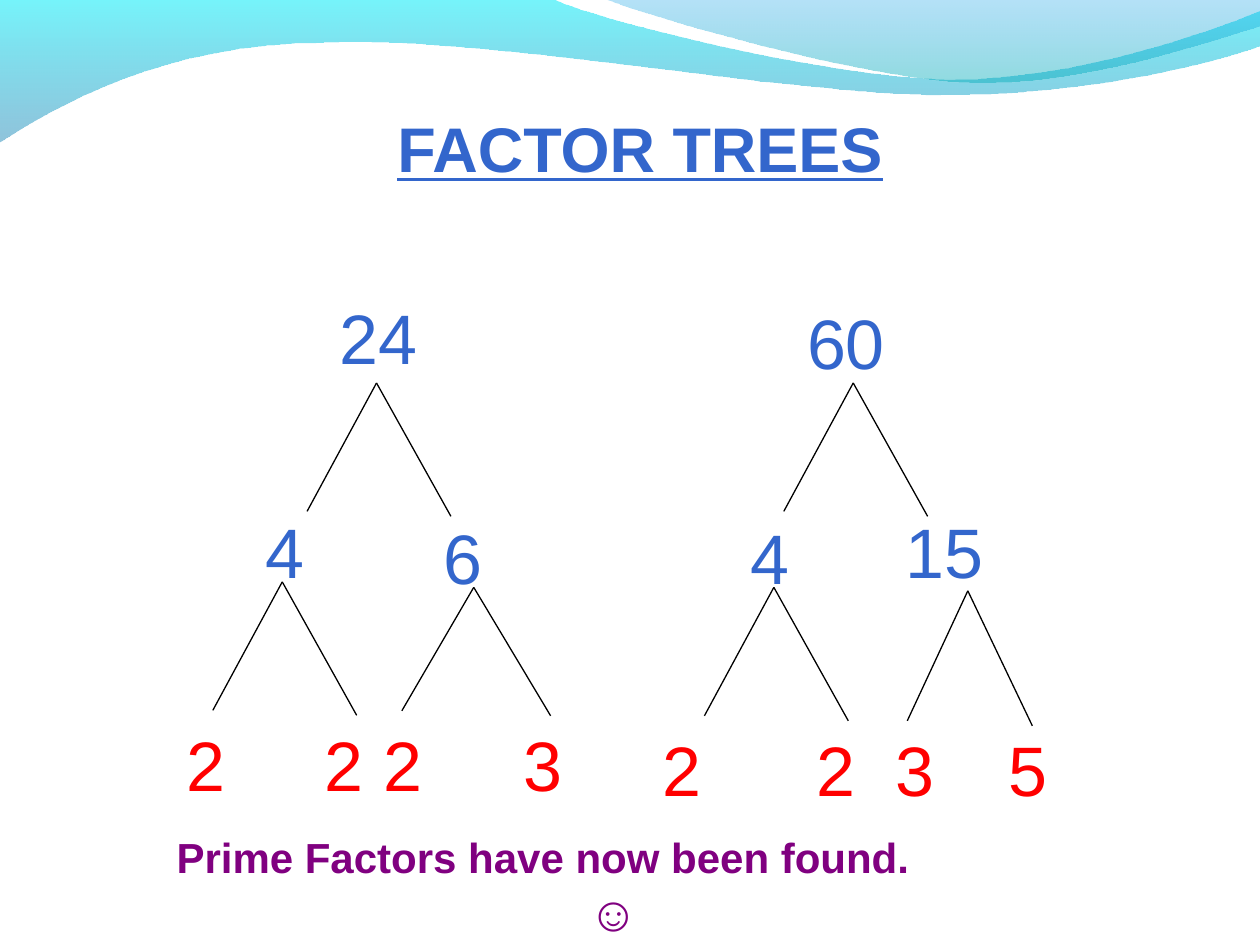
from dataclasses import dataclass

from lxml import etree
from pptx import Presentation
from pptx.dml.color import RGBColor
from pptx.enum.shapes import MSO_CONNECTOR
from pptx.enum.text import PP_ALIGN
from pptx.oxml.ns import qn
from pptx.slide import Slide
from pptx.text.text import TextFrame
from pptx.text.text import _Paragraph as Paragraph
from pptx.util import Cm, Pt

STRAIGHT = MSO_CONNECTOR.STRAIGHT
LEFT, CENTER = PP_ALIGN.LEFT, PP_ALIGN.CENTER
Point = tuple[float, float]


@dataclass(frozen=True)
class Theme:
    font: str = "Arial"
    blue: str = "3366CC"
    red: str = "FF0000"
    purple: str = "800080"
    black: str = "000000"
    title: int = 36
    number: int = 40
    note: int = 24
    smile: int = 28
    line: float = 0.75


THEME = Theme()


# All lengths below are in centimetres
@dataclass(frozen=True)
class GradientStop:
    color: str
    opacity: int


@dataclass(frozen=True)
class Wave:
    start: Point
    segments: list[tuple[Point, ...]]  # one point: line, three points: curve
    bottom: GradientStop
    top: GradientStop


@dataclass(frozen=True)
class Number:
    text: str
    left: float
    top: float
    width: float = 1.6
    indent: float = 0
    color: str = THEME.blue


@dataclass(frozen=True)
class Fork:
    x: float
    y: float
    left: float = 1.4
    right: float = 1.5
    drop: float = 2.59


WAVES = [
    Wave((-0.03, 0), [
        ((11.18, 0),),
        ((12.09, 0.43), (16.87, 1.6), (19.25, 1.6)),
        ((21.67, 1.6), (24.33, 0.66), (25.4, 0.23)),
        ((25.43, 0.91),),
        ((24.97, 1.12), (22.1, 1.93), (18.95, 1.91)),
        ((15.8, 1.91), (9.7, 0.71), (6.53, 0.86)),
        ((3.28, 0.89), (1.17, 2.11), (-0.03, 2.87)),
    ], GradientStop("0079AF", 44), GradientStop("00EBF8", 54)),
    Wave((12.17, -0.03), [
        ((12.93, 0.28), (17.32, 1.57), (19.53, 1.65)),
        ((21.74, 1.75), (24.41, 0.81), (25.4, 0.53)),
        ((25.4, 0),),
    ], GradientStop("00ADB6", 44), GradientStop("009BE5", 29)),
]

BRANCH_NUMBERS = [
    Number("24", 2.29, 5.82, 8.41, 4.3),
    Number("60", 13.89, 5.92, 8.41, 2.13),
    Number("4", 5.11, 10.13, 2.79),
    Number("6", 7.9, 10.24, 2.21, 0.79),
    Number("4", 14.1, 10.24, 2.39, 0.78),
    Number("15", 18.01, 10.13, 3.51),
]

# Top of each row of primes, with the digits and their left edges
PRIME_ROWS = [
    (14.43, [("2", 3.51), ("2", 6.3), ("2", 7.49), ("3", 10.31)]),
    (14.53, [("2", 13.11), ("2", 16.21), ("3", 17.81), ("5", 20.09)]),
]

FORKS = [
    Fork(7.59, 7.72),
    Fork(17.2, 7.72),
    Fork(5.69, 11.73),
    Fork(9.55, 11.84, 1.45, 1.55, 2.49),
    Fork(15.6, 11.84),
    Fork(19.51, 11.91, 1.22, 1.3, 2.62),
]


def draw_wave(slide: Slide, wave: Wave) -> None:
    corners = [(Cm(x), Cm(y)) for segment in wave.segments for x, y in segment]
    builder = slide.shapes.build_freeform(Cm(wave.start[0]), Cm(wave.start[1]))
    builder.add_line_segments(corners, close=True)
    shape = builder.convert_to_shape()

    # Join each run of three points into one Bézier curve
    lines = iter(list(shape._element.iter(qn("a:lnTo"))))
    for segment in wave.segments:
        pieces = [next(lines) for _ in segment]
        if len(pieces) == 3:
            curve = etree.Element(qn("a:cubicBezTo"))
            pieces[0].addprevious(curve)
            for piece in pieces:
                curve.append(piece[0])
                piece.getparent().remove(piece)

    shape.shadow.inherit = False
    shape.line.fill.background()
    shape.fill.gradient()
    shape.fill.gradient_angle = 90
    for stop, style in zip(shape.fill.gradient_stops, (wave.bottom, wave.top)):
        stop.color.rgb = RGBColor.from_string(style.color)
    colors = list(shape._element.spPr.iter(qn("a:srgbClr")))
    for color, style in zip(colors, (wave.bottom, wave.top)):
        etree.SubElement(color, qn("a:alpha"), val=str(style.opacity * 1000))


def style_paragraph(paragraph: Paragraph, text: str, size: int, color: str, bold: bool = False,
                    align: PP_ALIGN = LEFT, indent: float = 0) -> None:
    paragraph.text = text
    paragraph.alignment = align
    if indent:
        paragraph._p.get_or_add_pPr().set("marL", str(Cm(indent)))
    paragraph.font.name = THEME.font
    paragraph.font.size = Pt(size)
    paragraph.font.bold = bold
    paragraph.font.color.rgb = RGBColor.from_string(color)


def add_text_frame(slide: Slide, left: float, top: float, width: float,
                   height: float) -> TextFrame:
    box = slide.shapes.add_textbox(Cm(left), Cm(top), Cm(width), Cm(height))
    box.text_frame.word_wrap = True
    return box.text_frame


def draw_number(slide: Slide, number: Number) -> None:
    frame = add_text_frame(slide, number.left, number.top, number.width, 1.96)
    style_paragraph(frame.paragraphs[0], number.text, THEME.number, number.color,
                    indent=number.indent)


def draw_fork(slide: Slide, fork: Fork) -> None:
    group = slide.shapes.add_group_shape()
    feet = [(fork.x - fork.left, fork.y + fork.drop),
            (fork.x + fork.right, fork.y + fork.drop + 0.1)]
    for x, y in feet:
        branch = group.shapes.add_connector(STRAIGHT, Cm(fork.x), Cm(fork.y), Cm(x), Cm(y))
        branch.line.color.rgb = RGBColor.from_string(THEME.black)
        branch.line.width = Pt(THEME.line)
        etree.SubElement(branch._element.spPr, qn("a:effectLst"))


def main() -> None:
    presentation = Presentation()
    presentation.slide_width, presentation.slide_height = Cm(25.4), Cm(19.05)
    slide = presentation.slides.add_slide(presentation.slide_layouts[6])

    # Waves along the top
    for wave in WAVES:
        draw_wave(slide, wave)

    # Title
    title = add_text_frame(slide, 4.7, 2.08, 16.41, 1.78).paragraphs[0]
    style_paragraph(title, "FACTOR TREES", THEME.title, THEME.blue, True, CENTER)
    title.font.underline = True

    # Factor trees
    for number in BRANCH_NUMBERS:
        draw_number(slide, number)
    for fork in FORKS:
        draw_fork(slide, fork)
    for top, primes in PRIME_ROWS:
        for digit, left in primes:
            draw_number(slide, Number(digit, left, top, color=THEME.red))

    # Closing note
    note = add_text_frame(slide, 3.31, 16.64, 17.91, 2.46)
    style_paragraph(note.paragraphs[0], "Prime Factors have now been found.",
                    THEME.note, THEME.purple, True)
    style_paragraph(note.add_paragraph(), "☺", THEME.smile, THEME.purple, True, CENTER, 0.2)

    presentation.save("out.pptx")


if __name__ == "__main__":
    main()
